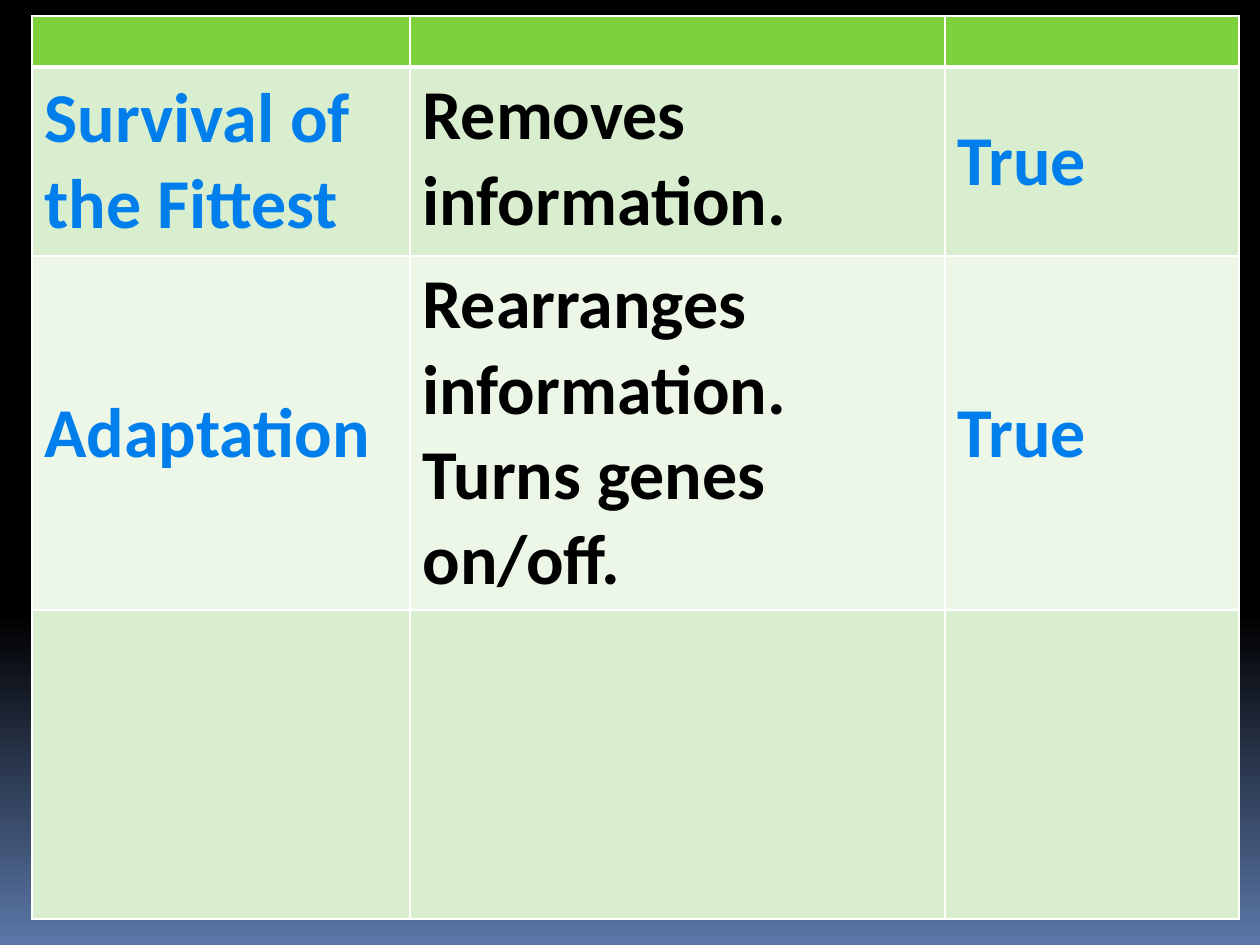
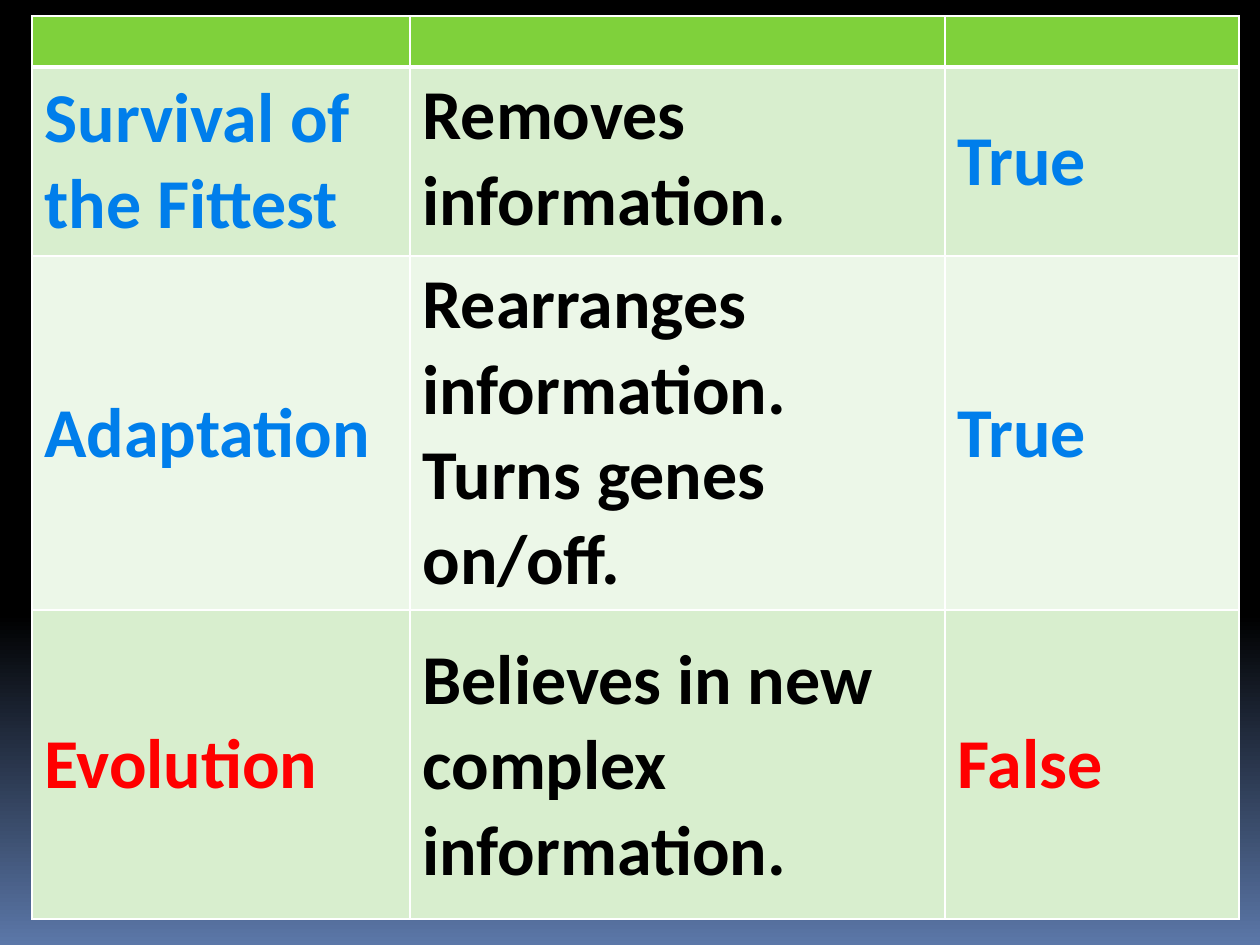
from lxml.etree import SubElement
from pptx import Presentation
from pptx.dml.color import RGBColor
from pptx.enum.text import MSO_ANCHOR as ANCHOR
from pptx.oxml.ns import qn
from pptx.util import Pt

PX = 914400 / 126
SLIDE_SIZE = (1260, 945)
TABLE_AT = (32, 16)
COL_WIDTHS = (378, 535, 294)
ROW_HEIGHTS = (51, 189, 354, 309)
COLORS = {
    "black": "000000",
    "dusk": "5B77A8",
    "header": "7FD13B",
    "band": "D8EECE",
    "light_band": "ECF7E8",
    "border": "FFFFFF",
    "true": "007EEB",
    "false": "FF0000",
}
FONT = {"name": "Calibri", "size": Pt(40), "bold": True}

HEADER = ("", "", "")
SURVIVAL = ("Survival of the Fittest", "Removes information.", "True")
ADAPTATION = ("Adaptation", "Rearranges information. Turns genes on/off.", "True")
EVOLUTION = ("Evolution", "Believes in new complex information.", "False")
EVOLUTION_TOP = 28  # px above the last explanation


def px(n):
    return round(n * PX)


def rgb(name):
    return RGBColor.from_string(COLORS[name])


def set_background(master):
    """Black down to 65 %, then fading to dusk blue."""
    fill = master.background.fill
    fill.gradient()
    fill.gradient_angle = 270
    for stop, (position, color) in zip(fill.gradient_stops, ((0.65, "black"), (1, "dusk"))):
        stop.position = position
        stop.color.rgb = rgb(color)


def set_borders(cell, widths):
    """Draw the left, right, top and bottom borders, widths in points."""
    tcPr = cell._tc.get_or_add_tcPr()
    for side, width in zip("LRTB", widths):
        ln = SubElement(tcPr, qn(f"a:ln{side}"), w=str(Pt(width)))
        fill = SubElement(ln, qn("a:solidFill"))
        SubElement(fill, qn("a:srgbClr"), val=COLORS["border"])


def write_cell(cell, text, color, anchor):
    cell.vertical_anchor = anchor
    p = cell.text_frame.paragraphs[0]
    r = p.add_run()
    r.text = text
    for name, value in FONT.items():
        setattr(r.font, name, value)
    r.font.color.rgb = rgb(color)


def fill_row(table, row, texts):
    band = "header" if row == 0 else "band" if row % 2 else "light_band"
    verdict = texts[-1].lower()
    for col, text in enumerate(texts):
        cell = table.cell(row, col)
        set_borders(cell, (1, 1, 3 if row == 1 else 1, 3 if row == 0 else 1))
        cell.fill.solid()
        cell.fill.fore_color.rgb = rgb(band)
        if text:
            explains = col == 1
            write_cell(cell, text, "black" if explains else verdict,
                       ANCHOR.TOP if explains else ANCHOR.MIDDLE)


def add_claims_table(slide, rows):
    size = (sum(COL_WIDTHS), sum(ROW_HEIGHTS))
    frame = slide.shapes.add_table(len(ROW_HEIGHTS), len(COL_WIDTHS),
                                   *map(px, TABLE_AT + size))
    table = frame.table
    for column, width in zip(table.columns, COL_WIDTHS):
        column.width = px(width)
    for table_row, height in zip(table.rows, ROW_HEIGHTS):
        table_row.height = px(height)
    for row, texts in enumerate(rows):
        fill_row(table, row, texts)
    return table


def main():
    prs = Presentation()
    prs.slide_width, prs.slide_height = map(px, SLIDE_SIZE)
    set_background(prs.slide_master)
    blank = prs.slide_layouts[6]
    for last_row in (("", "", ""), EVOLUTION):
        slide = prs.slides.add_slide(blank)
        table = add_claims_table(slide, (HEADER, SURVIVAL, ADAPTATION, last_row))
        table.cell(3, 1).margin_top = px(EVOLUTION_TOP)
    prs.save("out.pptx")


if __name__ == "__main__":
    main()
